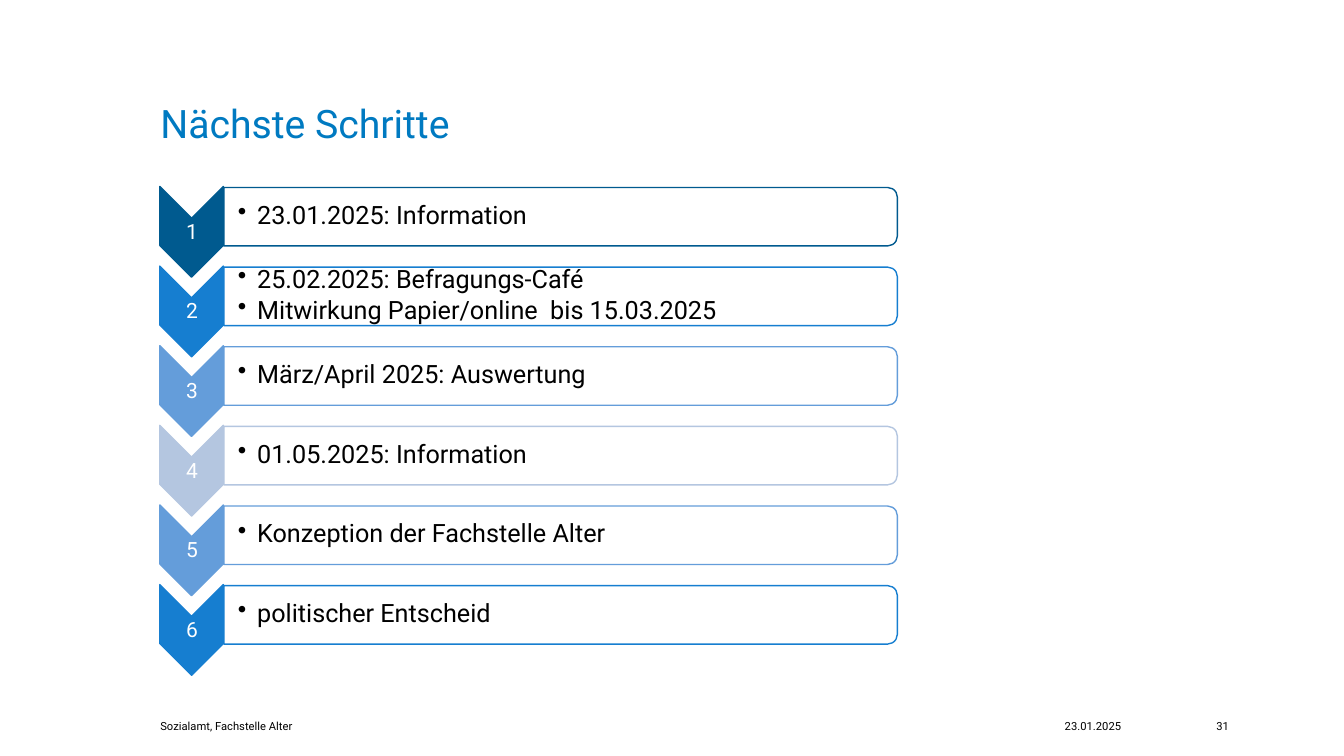
from lxml import etree
from pptx import Presentation, util as u
from pptx.dml.color import RGBColor
from pptx.enum import shapes as s, text as t
from pptx.oxml import ns

PX = 9144  # 100 px to the inch
NAVY = RGBColor(0x00, 0x5A, 0x8F)
BLUE = RGBColor(0x16, 0x7E, 0xD0)
SKY = RGBColor(0x64, 0x9D, 0xDA)
PALE = RGBColor(0xB4, 0xC6, 0xE0)
HEAD = RGBColor(0x00, 0x7A, 0xC1)
BLACK = RGBColor(0x00, 0x00, 0x00)
WHITE = RGBColor(0xFF, 0xFF, 0xFF)

LEFT, MID, RIGHT = t.PP_ALIGN.LEFT, t.PP_ALIGN.CENTER, t.PP_ALIGN.RIGHT
TOP, CENTER = t.MSO_ANCHOR.TOP, t.MSO_ANCHOR.MIDDLE

prs = Presentation()
prs.slide_width, prs.slide_height = 1333 * PX, 750 * PX
slide = prs.slides.add_slide(prs.slide_layouts[5])


def write(box, lines, size, color, align=LEFT, anchor=TOP,
          inset=(0, 5, 0, 5), space=1.0, bullet=False):
    frame = box.text_frame
    frame.text = "\n".join(lines)
    sides = ("margin_left", "margin_top", "margin_right", "margin_bottom")
    look = {"word_wrap": True, "auto_size": t.MSO_AUTO_SIZE.NONE,
            "vertical_anchor": anchor}
    look.update((side, gap * PX) for side, gap in zip(sides, inset))
    for key, val in look.items():
        setattr(frame, key, val)
    for i, para in enumerate(frame.paragraphs):
        para.alignment, para.line_spacing = align, space
        para.space_before = u.Pt(0)
        if bullet:
            para.level = 1
            para.space_after = u.Pt(3 if i < len(lines) - 1 else 0)
            props = para._p.get_or_add_pPr()
            props.set("marL", str(19 * PX))
            props.set("indent", str(-19 * PX))
            etree.SubElement(props, ns.qn("a:buChar")).set("char", "•")
        font = {"name": "Roboto", "size": u.Pt(size)}
        for key, val in font.items():
            setattr(para.runs[0].font, key, val)
        para.runs[0].font.color.rgb = color


def draw(kind, mid_x, mid_y, wide, high, fill, line):
    shape = slide.shapes.add_shape(
        kind, int((mid_x - wide / 2) * PX), int((mid_y - high / 2) * PX),
        wide * PX, high * PX)
    shape.rotation = 90
    shape.shadow.inherit = False
    shape.fill.solid()
    shape.fill.fore_color.rgb = fill
    shape.line.color.rgb = line
    shape.line.width = u.Pt(1)
    return shape


# Title
title = slide.shapes.title
spot = {"left": 159, "top": 99, "width": 964, "height": 86}
for key, val in spot.items():
    setattr(title, key, val * PX)
write(title, ["Nächste Schritte"], 28, HEAD, space=0.9)

# Footer
foot = [
    (159, 769, "Sozialamt, Fachstelle Alter", LEFT, 0),
    (959, 163, "23.01.2025", RIGHT, 10),
    (1154, 65, "31", RIGHT, 0),
]
for left, wide, label, align, pad in foot:
    box = slide.shapes.add_textbox(left * PX, 709 * PX, wide * PX, 26 * PX)
    write(box, [label], 8, BLACK, align, inset=(pad, 5, pad, 5))

# Steps: numbered chevron and card in each row
steps = [
    (NAVY, ["23.01.2025: Information"]),
    (BLUE, ["25.02.2025: Befragungs-Café",
            "Mitwirkung Papier/online  bis 15.03.2025"]),
    (SKY, ["März/April 2025: Auswertung"]),
    (PALE, ["01.05.2025: Information"]),
    (SKY, ["Konzeption der Fachstelle Alter"]),
    (BLUE, ["politischer Entscheid"]),
]
for i, (color, lines) in enumerate(steps):
    mid = 215 + 79 * i
    draw(s.MSO_SHAPE.CHEVRON, 190, mid + 15, 90, 63, color, color)
    num = slide.shapes.add_textbox(159 * PX, (mid + 2) * PX, 63 * PX, 27 * PX)
    write(num, [str(i + 1)], 15, WHITE, MID, CENTER, (1, 1, 1, 1), 0.9)

    card = draw(s.MSO_SHAPE.ROUND_2_SAME_RECTANGLE, 556, mid, 58, 668,
                WHITE, color)
    tint = card.fill._xPr.find(".//" + ns.qn("a:srgbClr"))
    etree.SubElement(tint, ns.qn("a:alpha")).set("val", "90000")
    body = slide.shapes.add_textbox(222 * PX, (mid - 27) * PX,
                                    665 * PX, 53 * PX)
    write(body, lines, 18, BLACK, LEFT, CENTER, (14, 1, 1, 1), 0.9, True)

prs.save("out.pptx")
